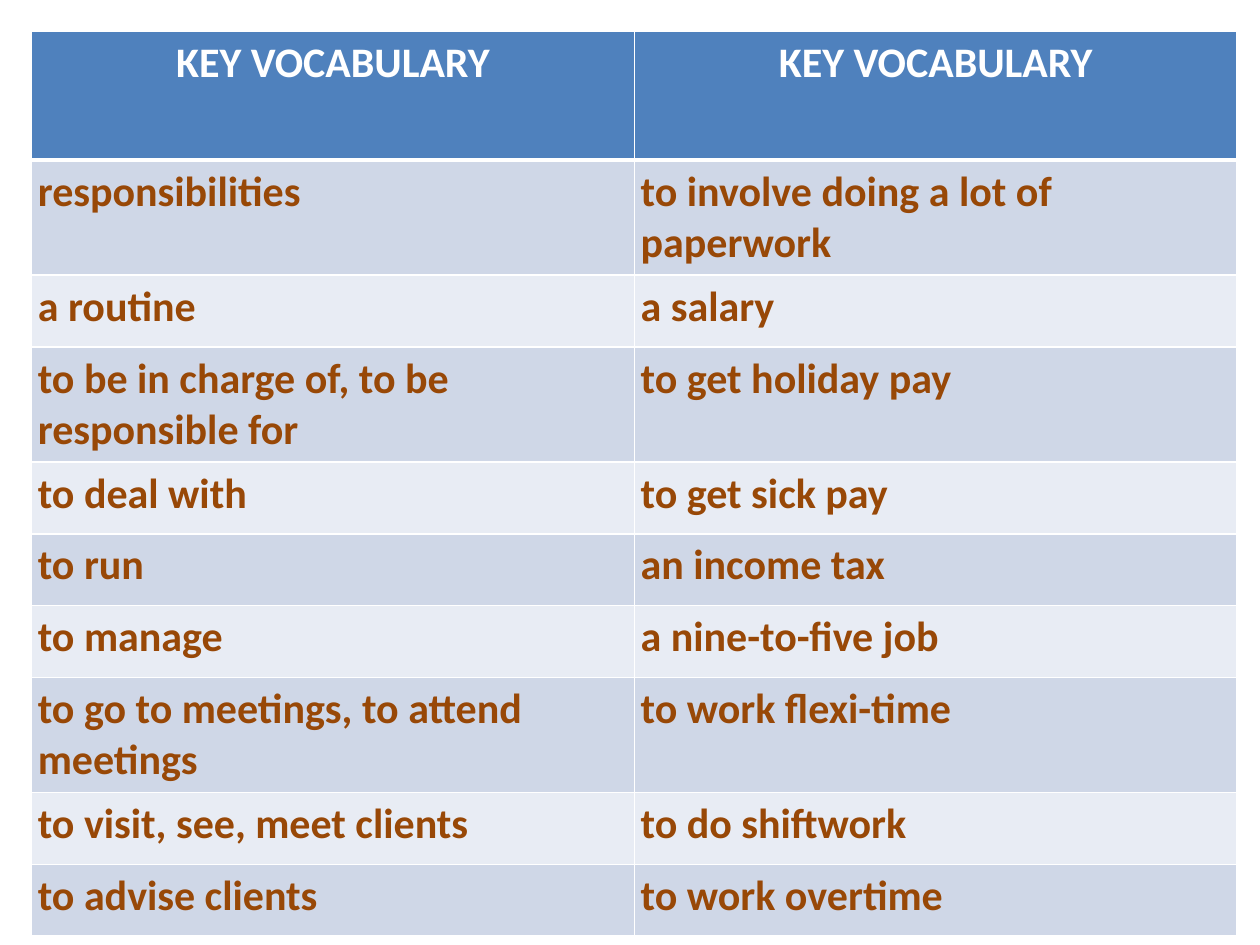
import pptx
import pptx.util
import pptx.dml.color
import pptx.enum.text
import pptx.oxml.ns
from lxml import etree

FONT = "Calibri"
WHITE, BLUE, BROWN = "FFFFFF", "4F81BD", "984807"
BANDS = ["CFD7E7", "E8ECF4"]
MARGIN, TABLE_WIDTH = 0.25, 9.57
HEADER_HEIGHT, ONE_LINE, TWO_LINES = 1.02, 0.57, 0.9
LINE_CHARACTERS = 30

HEADING = "KEY VOCABULARY"
VOCABULARY = [
    ("responsibilities", "to involve doing a lot of paperwork"),
    ("a routine", "a salary"),
    ("to be in charge of, to be responsible for", "to get holiday pay"),
    ("to deal with", "to get sick pay"),
    ("to run", "an income tax"),
    ("to manage", "a nine-to-five job"),
    ("to go to meetings, to attend meetings", "to work flexi-time"),
    ("to visit, see, meet clients", "to do shiftwork"),
    ("to advise clients", "to work overtime"),
]


def rgb(color):
    return pptx.dml.color.RGBColor.from_string(color)


def row_height(words):
    return TWO_LINES if max(map(len, words)) > LINE_CHARACTERS else ONE_LINE


def add_border(cell, side, width):
    qn = pptx.oxml.ns.qn
    tcPr = cell._tc.get_or_add_tcPr()
    ln = etree.SubElement(tcPr, qn(f"a:ln{side}"), w=str(pptx.util.Pt(width)))
    fill = etree.SubElement(ln, qn("a:solidFill"))
    etree.SubElement(fill, qn("a:srgbClr"), val=WHITE)


def fill_cell(cell, text, fill, color, widths, align=None):
    for side in "LRTB":
        add_border(cell, side, widths.get(side, 1))
    cell.fill.solid()
    cell.fill.fore_color.rgb = rgb(fill)
    inset = pptx.util.Inches(0.05)
    cell.margin_left = cell.margin_right = inset
    cell.margin_top = cell.margin_bottom = inset
    p = cell.text_frame.paragraphs[0]
    p.text = text
    p.alignment = align
    p.font.name = FONT
    p.font.size = pptx.util.Pt(24)
    p.font.bold = True
    p.font.color.rgb = rgb(color)


def add_vocabulary_table(s):
    inches = pptx.util.Inches
    heights = [HEADER_HEIGHT] + [row_height(words) for words in VOCABULARY]
    table = s.shapes.add_table(
        len(heights), 2, inches(MARGIN), inches(MARGIN),
        inches(TABLE_WIDTH), inches(sum(heights))).table
    for row, height in zip(table.rows, heights):
        row.height = inches(height)
    for column in range(2):
        fill_cell(table.cell(0, column), HEADING, BLUE, WHITE, {"B": 3},
                  pptx.enum.text.PP_ALIGN.CENTER)
    for i, words in enumerate(VOCABULARY):
        widths = {"T": 3} if i == 0 else {}
        for column, text in enumerate(words):
            fill_cell(table.cell(i + 1, column), text, BANDS[i % 2], BROWN, widths)


def main():
    prs = pptx.Presentation()
    prs.slide_width = pptx.util.Inches(10)
    prs.slide_height = pptx.util.Inches(7.5)
    s = prs.slides.add_slide(prs.slide_layouts[6])
    add_vocabulary_table(s)
    prs.save("out.pptx")


if __name__ == "__main__":
    main()
